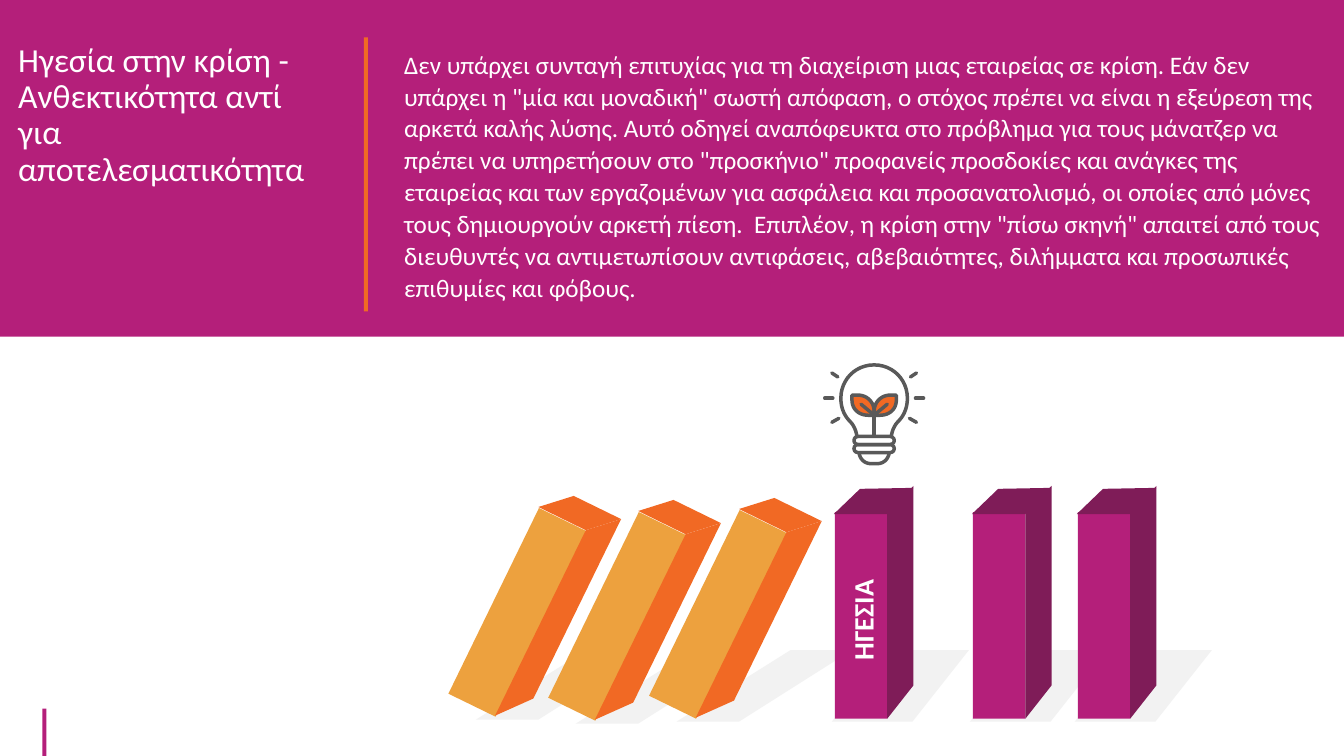
from dataclasses import dataclass

from lxml import etree
from pptx import Presentation
from pptx.dml.color import RGBColor
from pptx.enum.shapes import MSO_CONNECTOR, MSO_SHAPE
from pptx.enum.text import MSO_ANCHOR, MSO_AUTO_SIZE, PP_ALIGN
from pptx.oxml.ns import qn
from pptx.util import Pt

PX = 9144  # 100 px to the inch
RECTANGLE = MSO_SHAPE.RECTANGLE
ROUNDED = MSO_SHAPE.ROUNDED_RECTANGLE
STRAIGHT = MSO_CONNECTOR.STRAIGHT
TOP, BOTTOM = MSO_ANCHOR.TOP, MSO_ANCHOR.BOTTOM
LEFT, CENTER = PP_ALIGN.LEFT, PP_ALIGN.CENTER


@dataclass(frozen=True)
class Theme:
    magenta: str = "B41F7A"
    plum: str = "7F1C58"
    orange: str = "F16924"
    amber: str = "EDA13E"
    shadow: str = "F2F2F2"
    gray: str = "595959"
    white: str = "FFFFFF"
    font: str = "Calibri"
    title_size: int = 24
    label_size: int = 20
    body_size: int = 18
    stroke: float = 2.5


THEME = Theme()

TITLE = "Ηγεσία στην κρίση - Ανθεκτικότητα αντί για αποτελεσματικότητα"
BODY = (
    "Δεν υπάρχει συνταγή επιτυχίας για τη διαχείριση μιας εταιρείας σε κρίση. "
    "Εάν δεν υπάρχει η \"μία και μοναδική\" σωστή απόφαση, ο στόχος πρέπει να "
    "είναι η εξεύρεση της αρκετά καλής λύσης. Αυτό οδηγεί αναπόφευκτα στο "
    "πρόβλημα για τους μάνατζερ να πρέπει να υπηρετήσουν στο \"προσκήνιο\" "
    "προφανείς προσδοκίες και ανάγκες της εταιρείας και των εργαζομένων για "
    "ασφάλεια και προσανατολισμό, οι οποίες από μόνες τους δημιουργούν αρκετή "
    "πίεση.  Επιπλέον, η κρίση στην \"πίσω σκηνή\" απαιτεί από τους διευθυντές "
    "να αντιμετωπίσουν αντιφάσεις, αβεβαιότητες, διλήμματα και προσωπικές "
    "επιθυμίες και φόβους."
)
LABEL = "ΗΓΕΣΙΑ"

# Block faces as (colour, points), measured from the block's front corner
TILTED_SHADOW = [(98, 138), (-15, 209), (47, 209), (159, 138)]
TILTED_FACES = [
    (THEME.orange, [(82, -13), (129, 10), (94, 21), (47, -2)]),
    (THEME.orange, [(94, 21), (129, 10), (42, 188), (4, 205)]),
]
UPRIGHT_SHADOW = [(53, 137), (-3, 208), (77, 208), (133, 137)]
UPRIGHT_FACES = [
    (THEME.plum, [(-1, 2), (25, -23), (78, -24), (52, 2)]),
    (THEME.plum, [(52, 0), (78, -26), (78, 172), (52, 205)]),
]

# Bulb parts: left halves, mirrored about the bulb's axis.
# A pair is a line to a point, a six-tuple a cubic curve.
BULB_AXIS = 867
GLASS = [(867, 362), (848, 362, 834, 377, 834, 395), (834, 404, 837, 412, 843, 418),
         (847, 422, 849, 427, 850, 433)]
BASE = [(852, 449), (853, 456, 858, 460, 864, 460), (867, 460)]
LEAF = [(845, 392), (851, 392), (860, 392, 867, 399, 867, 408), (867, 412),
        (861, 412), (852, 412, 845, 406, 845, 397)]
VEIN = [(854, 401), (866, 411)]
RAYS = [[(818, 395), (826, 395)], [(825, 419), (832, 415)], [(825, 370), (831, 374)]]


def paint(shape, fill=None, line=None):
    shape.shadow.inherit = False
    if fill:
        shape.fill.solid()
        shape.fill.fore_color.rgb = RGBColor.from_string(fill)
    else:
        shape.fill.background()
    if line:
        stroke(shape.line, line)
    else:
        shape.line.fill.background()
    return shape


def stroke(line, color):
    line.color.rgb = RGBColor.from_string(color)
    line.width = Pt(THEME.stroke)


def add_box(slide, box, fill=None, line=None, kind=RECTANGLE, rotation=0):
    shape = slide.shapes.add_shape(kind, *(value * PX for value in box))
    shape.rotation = rotation
    return paint(shape, fill, line)


def add_outline(slide, points, fill=None, line=None, closed=True):
    points = [(x * PX, y * PX) for x, y in points]
    builder = slide.shapes.build_freeform(*points[0])
    builder.add_line_segments(points[1:], close=closed)
    return paint(builder.convert_to_shape(), fill, line)


def add_line(slide, points, color):
    ends = [value * PX for point in points for value in point]
    connector = slide.shapes.add_connector(STRAIGHT, *ends)
    stroke(connector.line, color)
    connector.line._get_or_add_ln().set("cap", "rnd")
    etree.SubElement(connector._element.spPr, qn("a:effectLst"))


def write_text(shape, text, size, anchor=TOP, align=LEFT, spacing=None, bold=False):
    frame = shape.text_frame
    frame.text = text
    paragraph = frame.paragraphs[0]
    formats = [
        (frame, {"word_wrap": True, "auto_size": MSO_AUTO_SIZE.NONE,
                 "vertical_anchor": anchor}),
        (paragraph, {"alignment": align, "line_spacing": spacing,
                     "space_before": Pt(0)}),
        (paragraph.runs[0].font, {"name": THEME.font, "size": Pt(size), "bold": bold}),
    ]
    for target, values in formats:
        for name, value in values.items():
            setattr(target, name, value)
    paragraph.runs[0].font.color.rgb = RGBColor.from_string(THEME.white)


def add_text(slide, box, text, size, rotation=0, **options):
    shape = slide.shapes.add_textbox(*(value * PX for value in box))
    shape.rotation = rotation
    write_text(shape, text, size, **options)


def add_title(slide, box, behind):
    title = slide.shapes.title
    for name, value in zip(("left", "top", "width", "height"), box):
        setattr(title, name, value * PX)
    write_text(title, TITLE, THEME.title_size, spacing=0.9)
    behind._element.addnext(title._element)


def add_block(slide, left, top, fill, shadow, faces, rotation=0):
    for color, points in [(THEME.shadow, shadow), (None, None), *faces]:
        if points is None:
            add_box(slide, (left, top, 52, 205), fill, rotation=rotation)
        else:
            add_outline(slide, [(left + x, top + y) for x, y in points], color)


def add_tilted(slide, left, top):
    add_block(slide, left, top, THEME.amber, TILTED_SHADOW, TILTED_FACES, 26)


def add_upright(slide, left):
    add_block(slide, left, 508, THEME.magenta, UPRIGHT_SHADOW, UPRIGHT_FACES)


def trace(segments, steps=12):
    """Turn lines and cubic curves into a list of points."""
    points = [segments[0]]
    for segment in segments[1:]:
        if len(segment) == 2:
            points.append(segment)
            continue
        controls = [points[-1], segment[:2], segment[2:4], segment[4:]]
        for step in range(1, steps + 1):
            t = step / steps
            weights = ((1 - t) ** 3, 3 * t * (1 - t) ** 2, 3 * t * t * (1 - t), t ** 3)
            points.append(tuple(sum(w * c[axis] for w, c in zip(weights, controls))
                                for axis in (0, 1)))
    return points


def mirror(points):
    return [(2 * BULB_AXIS - x, y) for x, y in points]


def add_bulb(slide):
    gray = THEME.gray
    glass, base, leaf = trace(GLASS), trace(BASE), trace(LEAF)
    add_outline(slide, glass[::-1] + mirror(glass)[1:], line=gray, closed=False)
    add_outline(slide, base + mirror(base)[-2::-1], line=gray, closed=False)
    for top in (433, 441):
        band = add_box(slide, (847, top, 40, 8), line=gray, kind=ROUNDED)
        band.adjustments[0] = 0.5
    for side in (list, mirror):
        add_outline(slide, side(leaf), THEME.orange, gray)
        for line in [VEIN, *RAYS]:
            add_line(slide, side(line), gray)
    add_line(slide, [(BULB_AXIS, 410), (BULB_AXIS, 432)], gray)


def main():
    presentation = Presentation()
    presentation.slide_width, presentation.slide_height = 1333 * PX, 750 * PX
    slide = presentation.slides.add_slide(presentation.slide_layouts[5])

    # Header band with title, divider and body
    add_box(slide, (42, 703, 4, 47), THEME.magenta)
    header = add_box(slide, (0, 0, 1333, 334), THEME.magenta)
    add_title(slide, (8, 38, 326, 386), header)
    add_box(slide, (361, 37, 4, 272), THEME.orange)
    add_text(slide, (391, 42, 934, 404), BODY, THEME.body_size, spacing=Pt(22.8))

    # Falling and standing blocks, back to front
    add_tilted(slide, 487, 505)
    add_tilted(slide, 586, 509)
    add_upright(slide, 965)
    add_upright(slide, 1069)
    add_tilted(slide, 686, 507)
    add_upright(slide, 828)
    add_text(slide, (759, 593, 192, 44), LABEL, THEME.label_size, rotation=270,
             anchor=BOTTOM, align=CENTER, bold=True)

    # Light bulb
    add_bulb(slide)
    presentation.save("out.pptx")


if __name__ == "__main__":
    main()
